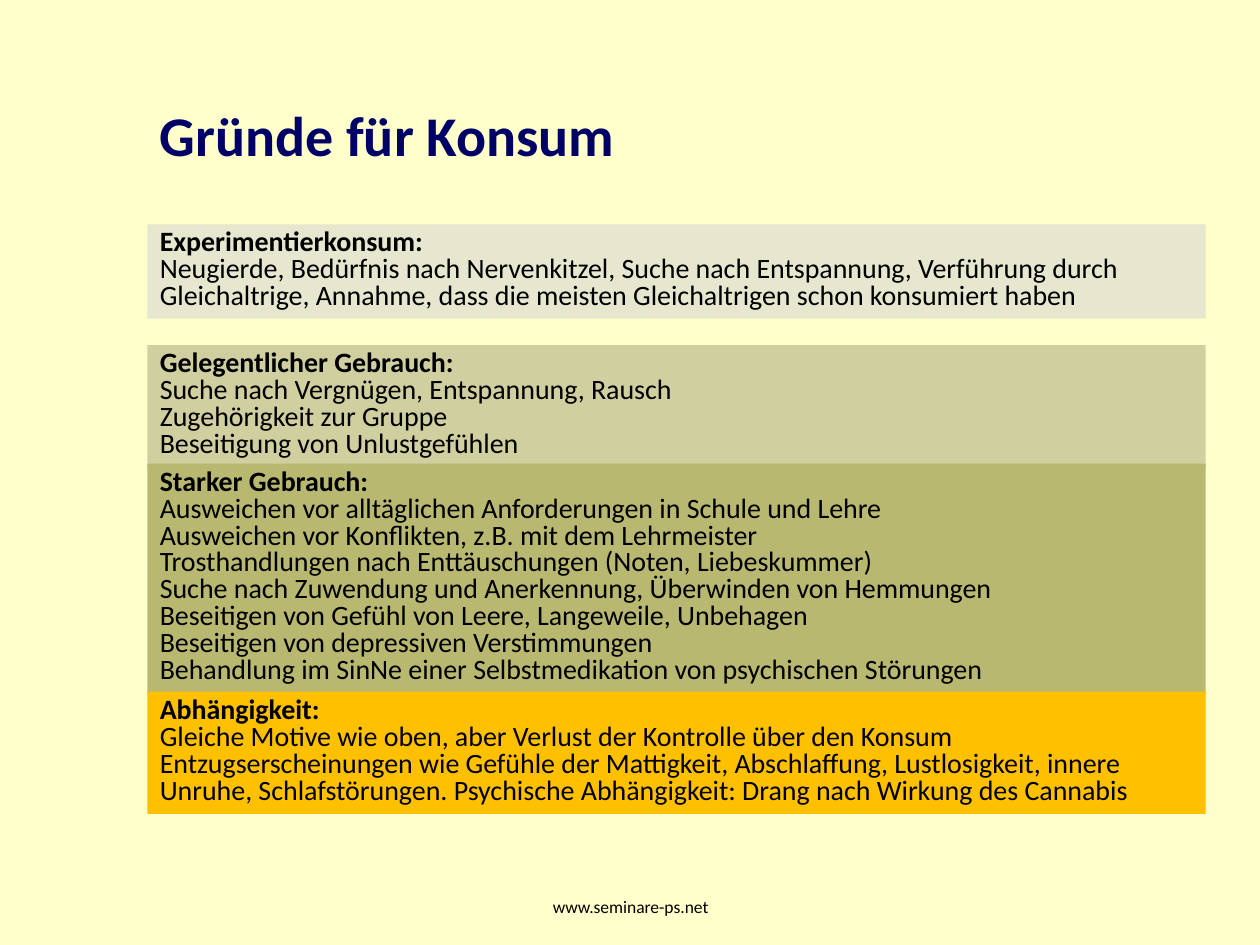
from pptx import Presentation
from pptx.dml.color import RGBColor
from pptx.enum import shapes, text
from pptx.util import Pt

COLORS = {
    "background": "FFFFCC",
    "title": "000066",
    "text": "000000",
    "experiment": "E7E7CF",
    "occasional": "CFCFA0",
    "heavy": "B8B870",
    "addiction": "FFC000",
}
FONT = "Calibri"
LEFT, STAGE_WIDTH = 84.24, 604.8

# Colour key, top, height, heading, reasons
STAGES = [
    ("experiment", 128.16, 54, "Experimentierkonsum:", [
        "Neugierde, Bedürfnis nach Nervenkitzel, Suche nach Entspannung, "
        "Verführung durch Gleichaltrige, Annahme, dass die meisten "
        "Gleichaltrigen schon konsumiert haben",
    ]),
    ("occasional", 197.28, 69.84, "Gelegentlicher Gebrauch:", [
        "Suche nach Vergnügen, Entspannung, Rausch",
        "Zugehörigkeit zur Gruppe",
        "Beseitigung von Unlustgefühlen",
    ]),
    ("heavy", 264.96, 131.76, "Starker Gebrauch:", [
        "Ausweichen vor alltäglichen Anforderungen in Schule und Lehre",
        "Ausweichen vor Konflikten, z.B. mit dem Lehrmeister",
        "Trosthandlungen nach Enttäuschungen (Noten, Liebeskummer)",
        "Suche nach Zuwendung und Anerkennung, Überwinden von Hemmungen",
        "Beseitigen von Gefühl von Leere, Langeweile, Unbehagen",
        "Beseitigen von depressiven Verstimmungen",
        "Behandlung im SinNe einer Selbstmedikation von psychischen Störungen",
    ]),
    ("addiction", 395.28, 69.84, "Abhängigkeit:", [
        "Gleiche Motive wie oben, aber Verlust der Kontrolle über den Konsum",
        "Entzugserscheinungen wie Gefühle der Mattigkeit, Abschlaffung, "
        "Lustlosigkeit, innere Unruhe, Schlafstörungen. Psychische "
        "Abhängigkeit: Drang nach Wirkung des Cannabis",
    ]),
]


def rgb(key):
    return RGBColor.from_string(COLORS[key])


def write(paragraph, wording, size, color="text", bold=False,
          align=text.PP_ALIGN.LEFT):
    paragraph.text = wording
    paragraph.alignment = align
    font = paragraph.font
    font.name, font.size, font.bold = FONT, Pt(size), bold
    font.color.rgb = rgb(color)


def add_label(slide, box, wording, size, anchor=text.MSO_ANCHOR.TOP, **style):
    """Single line of text in the given box."""
    frame = slide.shapes.add_textbox(*map(Pt, box)).text_frame
    frame.word_wrap = True
    frame.vertical_anchor = anchor
    write(frame.paragraphs[0], wording, size, **style)


def add_stage(slide, box, color, heading, reasons):
    """Coloured panel with a bold heading above its reasons."""
    panel = slide.shapes.add_shape(shapes.MSO_SHAPE.RECTANGLE, *map(Pt, box))
    panel.shadow.inherit = False
    panel.fill.solid()
    panel.fill.fore_color.rgb = rgb(color)
    panel.line.fill.background()
    frame = panel.text_frame
    frame.word_wrap = True
    frame.vertical_anchor = text.MSO_ANCHOR.TOP
    frame.auto_size = text.MSO_AUTO_SIZE.SHAPE_TO_FIT_TEXT
    for row, wording in enumerate([heading, *reasons]):
        paragraph = frame.add_paragraph() if row else frame.paragraphs[0]
        paragraph.line_spacing = 0.8
        write(paragraph, wording, 16, bold=row == 0)


def main():
    deck = Presentation()
    deck.slide_width, deck.slide_height = Pt(720), Pt(540)
    slide = deck.slides.add_slide(deck.slide_layouts[6])
    slide.background.fill.solid()
    slide.background.fill.fore_color.rgb = rgb("background")

    # Footer and title
    add_label(slide, (246.24, 508.32, 228.24, 20.16), "www.seminare-ps.net",
              10, align=text.PP_ALIGN.CENTER)
    add_label(slide, (LEFT, 31.68, 635.76, 90), "Gründe für Konsum", 32,
              anchor=text.MSO_ANCHOR.MIDDLE, color="title", bold=True)

    # Stages of use
    for color, top, height, heading, reasons in STAGES:
        add_stage(slide, (LEFT, top, STAGE_WIDTH, height),
                  color, heading, reasons)

    deck.save("out.pptx")


if __name__ == "__main__":
    main()
